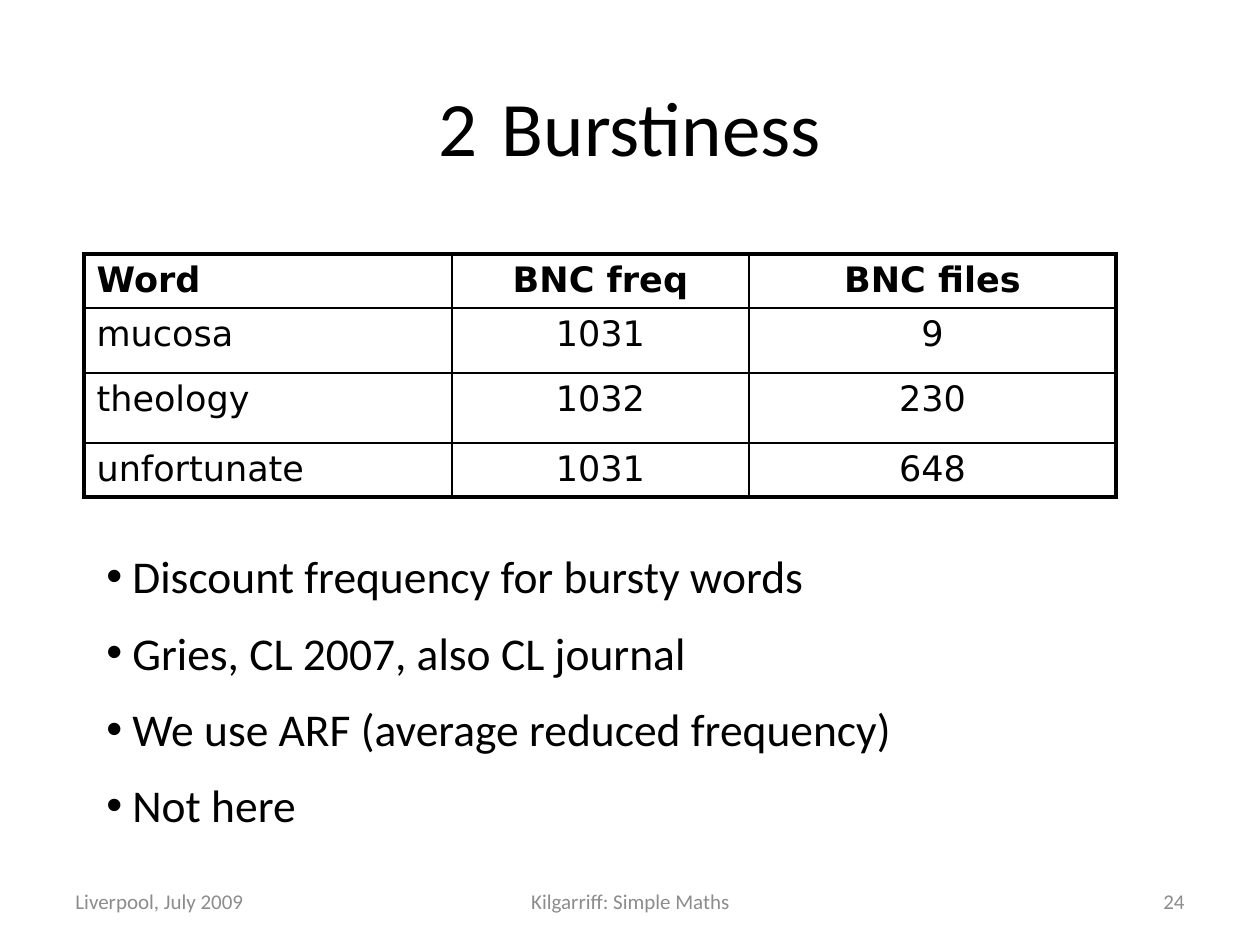
from lxml import etree
from pptx import Presentation
from pptx import util as u
from pptx.dml.color import RGBColor
from pptx.enum import text
from pptx.oxml.ns import qn

PX = 914400 / 126
BLACK = RGBColor(0x00, 0x00, 0x00)
GREY = RGBColor(0x8C, 0x8C, 0x8C)
LEFT, CENTER, RIGHT = text.PP_ALIGN.LEFT, text.PP_ALIGN.CENTER, text.PP_ALIGN.RIGHT
THIN, THICK = 1, 2.25

TITLE = "2\tBurstiness"
ROWS = [
    ("Word", "BNC freq", "BNC files"),
    ("mucosa", "1031", "9"),
    ("theology", "1032", "230"),
    ("unfortunate", "1031", "648"),
]
COLUMN_WIDTHS = [368, 297, 367]
ROW_HEIGHTS = [54, 65, 70, 54]
BULLETS = [
    "Discount frequency for bursty words",
    "Gries, CL 2007, also CL journal",
    "We use ARF (average reduced frequency)",
    "Not here",
]
FOOTERS = [
    ("Liverpool, July 2009", 63, 294, LEFT),
    ("Kilgarriff: Simple Maths", 431, 399, CENTER),
    ("24", 903, 294, RIGHT),
]


def px(length):
    return u.Emu(round(length * PX))


def style(para, size, font="Calibri", color=BLACK, align=LEFT, bold=False):
    para.alignment = align
    para.font.size = u.Pt(size)
    para.font.name = font
    para.font.color.rgb = color
    para.font.bold = bold


def add_box(page, left, top, width, height):
    box = page.shapes.add_textbox(px(left), px(top), px(width), px(height))
    box.text_frame.word_wrap = True
    return box.text_frame


def add_border(cell, side, width):
    properties = cell._tc.get_or_add_tcPr()
    line = etree.SubElement(properties, qn(f"a:ln{side}"), w=str(u.Pt(width)))
    fill = etree.SubElement(line, qn("a:solidFill"))
    etree.SubElement(fill, qn("a:srgbClr"), val=str(BLACK))


def add_bullet(para, indent):
    properties = para._p.get_or_add_pPr()
    properties.set("marL", str(px(indent)))
    properties.set("indent", str(-px(indent)))
    etree.SubElement(properties, qn("a:buFont"), typeface="Arial")
    etree.SubElement(properties, qn("a:buChar"), char="•")


def add_title(page):
    title = page.shapes.title
    title.left, title.top, title.width, title.height = map(px, (79, 42, 1102, 168))
    title.text_frame.text = TITLE
    title.text_frame.vertical_anchor = text.MSO_ANCHOR.MIDDLE
    style(title.text_frame.paragraphs[0], 44, align=CENTER)


def add_word_table(page):
    last_row, last_column = len(ROWS) - 1, len(COLUMN_WIDTHS) - 1
    table = page.shapes.add_table(
        len(ROWS), len(COLUMN_WIDTHS), px(84), px(254),
        px(sum(COLUMN_WIDTHS)), px(sum(ROW_HEIGHTS))).table
    table.horz_banding = False
    for column, width in zip(table.columns, COLUMN_WIDTHS):
        column.width = px(width)
    for row, height in zip(table.rows, ROW_HEIGHTS):
        row.height = px(height)
    for r, words in enumerate(ROWS):
        for c, word in enumerate(words):
            cell = table.cell(r, c)
            cell.text = word
            style(cell.text_frame.paragraphs[0], 20, "DejaVu Sans",
                  align=CENTER if c else LEFT, bold=r == 0)
            outer = {"L": c == 0, "R": c == last_column, "T": r == 0, "B": r == last_row}
            for side, is_outer in outer.items():
                add_border(cell, side, THICK if is_outer else THIN)
            cell.fill.background()


def add_bullets(page):
    frame = add_box(page, 94, 542, 1032, 314)
    for i, line in enumerate(BULLETS):
        para = frame.add_paragraph() if i else frame.paragraphs[0]
        para.text = line
        style(para, 26)
        para.space_before = u.Pt(12.5 if i else 0)
        add_bullet(para, 26)


def add_footers(page):
    for words, left, width, align in FOOTERS:
        frame = add_box(page, left, 876, width, 50)
        frame.vertical_anchor = text.MSO_ANCHOR.MIDDLE
        frame.text = words
        style(frame.paragraphs[0], 12, color=GREY, align=align)


def main():
    deck = Presentation()
    deck.slide_width, deck.slide_height = px(1260), px(945)
    page = deck.slides.add_slide(deck.slide_layouts[5])
    add_title(page)
    add_word_table(page)
    add_bullets(page)
    add_footers(page)
    deck.save("out.pptx")


if __name__ == "__main__":
    main()
